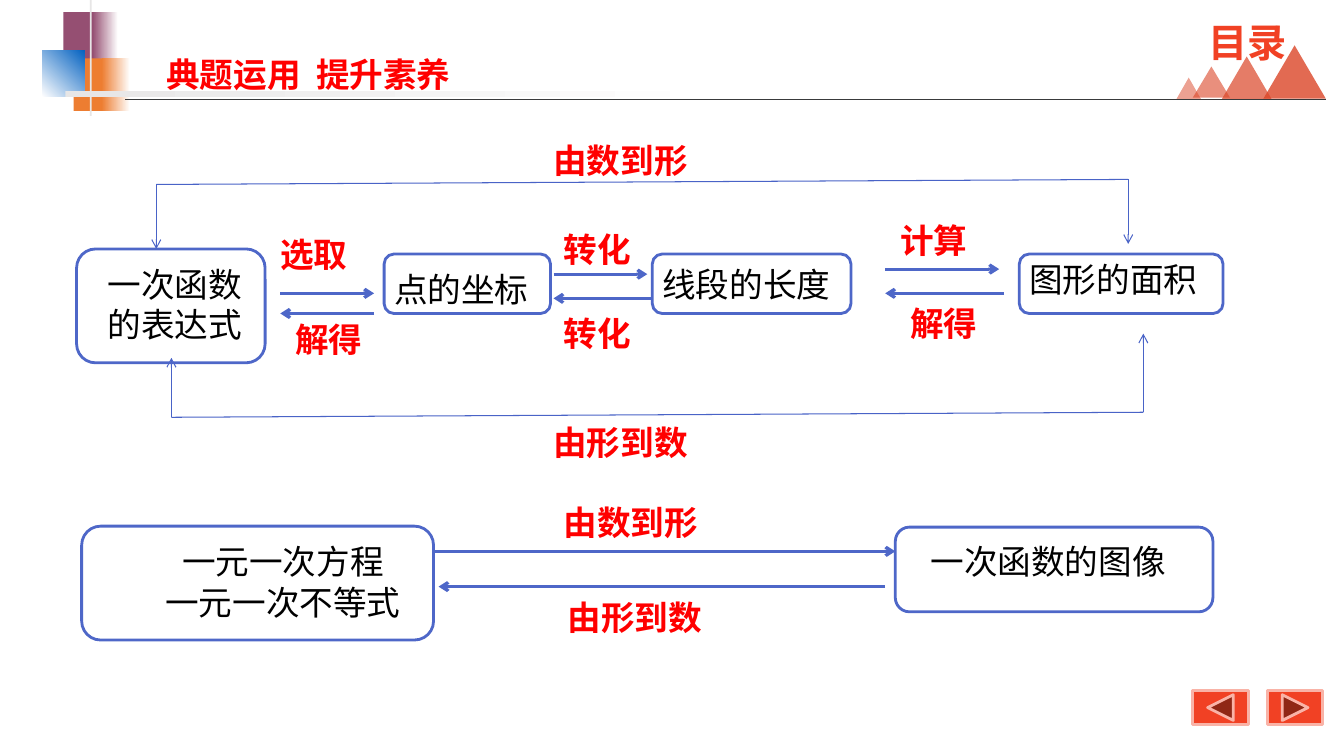
"""Build the slide that maps linear functions between numbers and shapes."""
from lxml.etree import SubElement
from pptx import Presentation
from pptx.dml.color import RGBColor
from pptx.enum.shapes import MSO_CONNECTOR, MSO_SHAPE
from pptx.enum.text import MSO_ANCHOR, MSO_AUTO_SIZE, PP_ALIGN
from pptx.oxml.ns import qn
from pptx.util import Inches, Pt


def paint(color, value):
    color.rgb = RGBColor.from_string(value)


def write(sp, text, name, color, size=24, bold=False, align=PP_ALIGN.LEFT, wrap=True):
    tf = sp.text_frame
    tf.text = text
    tf.word_wrap = wrap
    tf.auto_size = MSO_AUTO_SIZE.SHAPE_TO_FIT_TEXT
    tf.vertical_anchor = MSO_ANCHOR.TOP
    for p in tf.paragraphs:
        p.alignment = align
        p.font.size, p.font.bold = Pt(size), bold
        paint(p.font.fill.fore_color if p.font.fill.type else p.font.color, color)
        p.font.name = name
        rpr = p._p.get_or_add_pPr().get_or_add_defRPr()
        SubElement(rpr, qn("a:ea")).set("typeface", "Noto Sans CJK SC")


BLUE, THIN_BLUE, RED, BLACK, ORANGE = "4E67C8", "4963C7", "FF0000", "000000", "F14124"
SERIF, SANS = "Times New Roman", "Noto Sans CJK SC"

prs = Presentation()
prs.slide_width, prs.slide_height = Inches(13.33), Inches(7.5)
s = prs.slides.add_slide(prs.slide_layouts[5])

triangles = [
    (12.53, 0.45, 0.62, 0.53, 80),
    (12.12, 0.56, 0.49, 0.42, 70),
    (11.83, 0.66, 0.37, 0.31, 60),
    (11.67, 0.77, 0.24, 0.21, 50),
]
for *box, opacity in triangles:
    sp = s.shapes.add_shape(MSO_SHAPE.ISOSCELES_TRIANGLE, *map(Inches, box))
    sp.shadow.inherit = False
    sp.fill.solid()
    paint(sp.fill.fore_color, "DB4527")
    clr = sp._element.spPr.find(qn("a:solidFill"))[0]
    SubElement(clr, qn("a:alpha")).set("val", str(opacity * 1000))
    sp.line.fill.background()

buttons = [
    (MSO_SHAPE.ACTION_BUTTON_FORWARD_OR_NEXT, 12.57),
    (MSO_SHAPE.ACTION_BUTTON_BACK_OR_PREVIOUS, 11.83),
]
for kind, x in buttons:
    sp = s.shapes.add_shape(kind, Inches(x), Inches(6.85), Inches(0.55), Inches(0.34))
    sp.shadow.inherit = False
    sp.fill.solid()
    paint(sp.fill.fore_color, ORANGE)
    paint(sp.line.color, "F9B3A7")
    sp.line.width = Pt(2)

blocks = [
    (0.63, 0.12, 0.33, 0.52, ["954F72"], 0),
    (0.92, 0.12, 0.25, 0.52, ["954F72", "FFFFFF"], 0),
    (0.73, 0.58, 0.32, 0.52, ["ED7D31"], 0),
    (1.01, 0.58, 0.28, 0.52, ["ED7D31", "FFFFFF"], 0),
    (0.42, 0.5, 0.42, 0.46, ["FFFFFF", "0563C1"], 45),
    (0.89, 0, 0.02, 1.15, ["E7E6E6"], 0),
    (0.65, 0.9, 6.54, 0.06, ["E7E6E6", "FFFFFF"], 0),
]
for *box, colors, angle in blocks:
    sp = s.shapes.add_shape(MSO_SHAPE.RECTANGLE, *map(Inches, box))
    sp.shadow.inherit = False
    sp.line.fill.background()
    if len(colors) == 1:
        sp.fill.solid()
        paint(sp.fill.fore_color, colors[0])
    else:
        sp.fill.gradient()
        sp.fill.gradient_angle = angle
        for stop, color in zip(sp.fill.gradient_stops, colors):
            paint(stop.color, color)

lines = [
    (1.24, 0.98, 13.15, 0.98, "393A3B", 0.25, False),
    (1.55, 1.83, 11.19, 1.78, THIN_BLUE, 0.75, False),
    (1.7, 4.14, 11.34, 4.09, THIN_BLUE, 0.75, False),
]
loop_arrows = [
    (11.19, 1.78, 11.19, 2.42),
    (1.55, 1.83, 1.55, 2.47),
    (11.34, 4.09, 11.34, 3.31),
    (1.7, 4.14, 1.7, 3.55),
]
step_arrows = [
    (2.78, 2.91, 3.71, 2.91),
    (3.71, 3.11, 2.78, 3.11),
    (5.49, 2.72, 6.42, 2.72),
    (6.47, 2.96, 5.49, 2.96),
    (8.78, 2.67, 9.91, 2.67),
    (9.96, 2.91, 8.78, 2.91),
    (4.3, 5.47, 8.88, 5.47),
    (8.78, 5.82, 4.35, 5.82),
]
lines += [(*ends, THIN_BLUE, 0.75, True) for ends in loop_arrows]
lines += [(*ends, BLUE, 2.25, True) for ends in step_arrows]
for *ends, color, width, arrow in lines:
    cx = s.shapes.add_connector(MSO_CONNECTOR.STRAIGHT, *map(Inches, ends))
    paint(cx.line.color, color)
    cx.line.width = Pt(width)
    if arrow:
        SubElement(cx.line._get_or_add_ln(), qn("a:tailEnd")).set("type", "arrow")
    SubElement(cx._element.spPr, qn("a:effectLst"))

frames = [
    (0.76, 2.47, 1.87, 1.13),
    (3.81, 2.52, 1.65, 0.59),
    (6.47, 2.52, 1.97, 0.59),
    (10.11, 2.52, 2.02, 0.59),
    (0.81, 5.22, 3.49, 1.13),
    (8.88, 5.23, 3.15, 0.84),
]
for box in frames:
    sp = s.shapes.add_shape(MSO_SHAPE.ROUNDED_RECTANGLE, *map(Inches, box))
    sp.shadow.inherit = False
    sp.fill.background()
    paint(sp.line.color, BLUE)
    sp.line.width = Pt(2)

concepts = [
    (0.81, 2.57, 1.85, 0.91, "一次函数的表达式", PP_ALIGN.CENTER),
    (3.81, 2.62, 1.77, 0.5, "点的坐标", PP_ALIGN.LEFT),
    (6.47, 2.57, 1.92, 0.5, "线段的长度", PP_ALIGN.LEFT),
    (10.11, 2.52, 2.17, 0.5, "图形的面积", PP_ALIGN.LEFT),
    (0.86, 5.32, 3.89, 0.91, "一元一次方程\n一元一次不等式", PP_ALIGN.CENTER),
    (9.13, 5.32, 2.61, 0.5, "一次函数的图像", PP_ALIGN.LEFT),
]
for *box, text, align in concepts:
    write(s.shapes.add_textbox(*map(Inches, box)), text, SERIF, BLACK, align=align)

labels = [
    (2.68, 2.27, 0.94, "选取"),
    (2.83, 3.11, 0.94, "解得"),
    (5.49, 2.22, 0.94, "转化"),
    (5.49, 3.06, 0.94, "转化"),
    (8.83, 2.13, 0.94, "计算"),
    (8.93, 2.96, 0.94, "解得"),
    (5.39, 1.34, 2.12, "由数到形"),
    (5.39, 4.14, 2.12, "由形到数"),
    (5.49, 4.93, 2.12, "由数到形"),
    (5.53, 5.87, 2.12, "由形到数"),
]
for x, y, w, text in labels:
    sp = s.shapes.add_textbox(Inches(x), Inches(y), Inches(w), Inches(0.5))
    write(sp, text, SANS, RED, bold=True)

sp = s.shapes.add_textbox(Inches(11.88), Inches(0.13), Inches(0.98), Inches(0.57))
write(sp, "目录", SERIF, ORANGE, size=28, bold=True, align=PP_ALIGN.CENTER, wrap=False)

title = s.shapes.title
title.left, title.top = Inches(1.55), Inches(0.4)
title.width, title.height = Inches(3.08), Inches(0.54)
write(title, "典题运用  提升素养", "Arial", RED, bold=True, align=PP_ALIGN.JUSTIFY, wrap=False)
title.text_frame.paragraphs[0].line_spacing = 1.2

prs.save("out.pptx")
